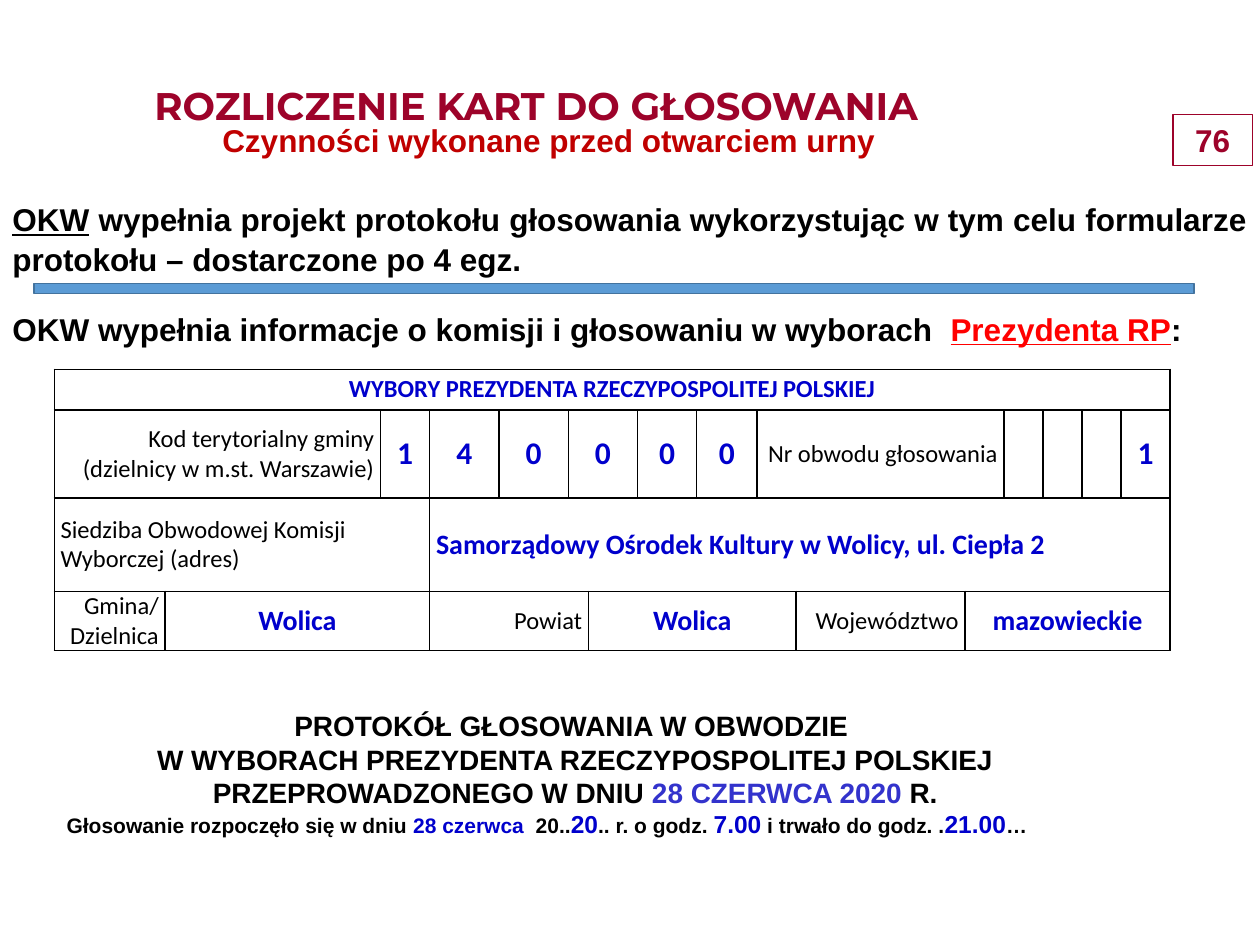
from typing import NamedTuple, Optional

from lxml.etree import SubElement
from pptx import Presentation
from pptx.dml.color import RGBColor
from pptx.enum.shapes import MSO_SHAPE as Preset
from pptx.enum.text import MSO_ANCHOR as Anchor, MSO_AUTO_SIZE as AutoSize, PP_ALIGN as Align
from pptx.oxml.ns import qn
from pptx.util import Pt

BLACK, BLUE, MAROON = "000000", "0000CC", "9D032A"
COLUMN_WIDTHS = [63.4, 123.1, 28.1, 39.6, 39.6, 11.5, 28.1, 33.8,
                 34.6, 22.3, 96.5, 22.3, 22.3, 22.3, 22.3, 28.1]
ROW_HEIGHTS = [23.2, 50.4, 53.3, 33.8]


class Span(NamedTuple):
    text: str
    size: float = 18
    color: str = BLACK
    bold: bool = True
    underline: bool = False
    font: str = "Arial"


class Para(NamedTuple):
    spans: list[Span]
    align: Align = Align.CENTER
    after: float = 0
    line: Optional[float] = None


class Frame(NamedTuple):
    left: float
    top: float
    width: float
    height: float


class Entry(NamedTuple):
    row: int
    column: int
    width: int
    span: Span
    align: Align = Align.CENTER


def rgb(value: str) -> RGBColor:
    return RGBColor.from_string(value)


def label(text: str) -> Span:
    return Span(text, 14, BLACK, False, font="Calibri")


def value(text: str, size: float = 16) -> Span:
    return Span(text, size, BLUE, font="Calibri")


def write_para(target, para: Para) -> None:
    target.alignment = para.align
    target.space_after = Pt(para.after)
    if para.line:
        target.line_spacing = Pt(para.line)
    for span in para.spans:
        for index, text in enumerate(span.text.split("\n")):
            if index:
                target.add_line_break()
            run = target.add_run()
            run.text = text
            run.font.name = span.font
            run.font.size = Pt(span.size)
            run.font.bold = span.bold
            run.font.underline = span.underline
            run.font.color.rgb = rgb(span.color)


def write_text(box, paras: list[Para]) -> None:
    frame = box.text_frame
    frame.word_wrap = True
    frame.auto_size = AutoSize.SHAPE_TO_FIT_TEXT
    for index, para in enumerate(paras):
        write_para(frame.add_paragraph() if index else frame.paragraphs[0], para)


def add_text(page, place: Frame, paras: list[Para]):
    box = page.shapes.add_textbox(*map(Pt, place))
    write_text(box, paras)
    return box


def add_rectangle(page, place: Frame, line: str, weight: float, fill: Optional[str] = None):
    box = page.shapes.add_shape(Preset.RECTANGLE, *map(Pt, place))
    box.shadow.inherit = False
    if fill:
        box.fill.solid()
        box.fill.fore_color.rgb = rgb(fill)
    else:
        box.fill.background()
    box.line.color.rgb = rgb(line)
    box.line.width = Pt(weight)
    return box


def style_cell(cell) -> None:
    properties = cell._tc.get_or_add_tcPr()
    for side in ("a:lnL", "a:lnR", "a:lnT", "a:lnB"):
        border = SubElement(properties, qn(side), w=str(Pt(1)))
        SubElement(SubElement(border, qn("a:solidFill")), qn("a:srgbClr"), val=BLACK)
    cell.fill.background()
    cell.vertical_anchor = Anchor.MIDDLE
    cell.margin_left = cell.margin_right = Pt(3.6)
    cell.margin_top = cell.margin_bottom = Pt(0)


def add_form(page, place: Frame, entries: list[Entry]) -> None:
    table = page.shapes.add_table(len(ROW_HEIGHTS), len(COLUMN_WIDTHS), *map(Pt, place)).table
    table.first_row = table.horz_banding = False
    for column, width in zip(table.columns, COLUMN_WIDTHS):
        column.width = Pt(width)
    for row, height in zip(table.rows, ROW_HEIGHTS):
        row.height = Pt(height)
    for cell in table.iter_cells():
        style_cell(cell)
    for entry in entries:
        cell = table.cell(entry.row, entry.column)
        if entry.width > 1:
            cell.merge(table.cell(entry.row, entry.column + entry.width - 1))
        write_para(cell.text_frame.paragraphs[0], Para([entry.span], entry.align))


def main() -> None:
    deck = Presentation()
    deck.slide_width, deck.slide_height = Pt(720), Pt(540)
    page = deck.slides.add_slide(deck.slide_layouts[6])

    number = add_rectangle(page, Frame(670.3, 65.5, 45.4, 29), MAROON, 0.75)
    write_text(number, [Para([Span("76", color=MAROON)])])

    add_text(page, Frame(0, 109.4, 720, 93.6), [
        Para([Span("OKW", underline=True),
              Span(" wypełnia projekt protokołu głosowania wykorzystując w tym celu "
                   "formularze protokołu – dostarczone po 4 egz.")], Align.JUSTIFY, 18, 23),
        Para([Span("OKW wypełnia informacje o komisji i głosowaniu w wyborach  "),
              Span("Prezydenta RP", color="FF0000", underline=True),
              Span(":")], Align.JUSTIFY, 6),
    ])

    digits = [(2, 1, "1"), (3, 1, "4"), (4, 1, "0"), (5, 2, "0"),
              (7, 1, "0"), (8, 1, "0"), (15, 1, "1")]
    add_form(page, Frame(31, 211, 640.8, 160.6), [
        Entry(0, 0, 16, value("WYBORY PREZYDENTA RZECZYPOSPOLITEJ POLSKIEJ", 14)),
        Entry(1, 0, 2, label("Kod terytorialny gminy (dzielnicy w m.st. Warszawie)"), Align.RIGHT),
        *(Entry(1, column, width, value(digit, 18)) for column, width, digit in digits),
        Entry(1, 9, 3 - 1 + 1, label("Nr obwodu głosowania"), Align.RIGHT)._replace(width=3),
        Entry(2, 0, 3, label("Siedziba Obwodowej Komisji Wyborczej (adres)"), Align.LEFT),
        Entry(2, 3, 13, value("Samorządowy Ośrodek Kultury w Wolicy, ul. Ciepła 2"), Align.LEFT),
        Entry(3, 0, 1, label("Gmina/Dzielnica"), Align.RIGHT),
        Entry(3, 1, 2, value("Wolica")),
        Entry(3, 3, 3, label("Powiat"), Align.RIGHT),
        Entry(3, 6, 4, value("Wolica")),
        Entry(3, 10, 1, label("Województwo"), Align.RIGHT),
        Entry(3, 11, 5, value("mazowieckie")),
    ])

    protocol = add_text(page, Frame(31, 392.4, 595.4, 87.1), [
        Para([Span("PROTOKÓŁ GŁOSOWANIA W OBWODZIE \n"
                   "W WYBORACH PREZYDENTA RZECZYPOSPOLITEJ POLSKIEJ", 16)]),
        Para([Span("PRZEPROWADZONEGO W DNIU ", 16),
              Span("28 CZERWCA 2020 ", 16, "3333CC"), Span("R.", 16)]),
        Para([Span("Głosowanie rozpoczęło się w dniu ", 12), Span("28 czerwca ", 12, BLUE),
              Span(" 20..", 12), Span("20", 14, BLUE), Span(".. r. o godz. ", 12),
              Span("7.00", 14, BLUE), Span(" i trwało do godz. .", 12),
              Span("21.00", 14, BLUE), Span("…", 12)], Align.LEFT),
    ])
    protocol.text_frame.vertical_anchor = Anchor.MIDDLE
    protocol.text_frame.margin_top = Pt(12.2)
    protocol.text_frame.margin_bottom = Pt(0)

    add_rectangle(page, Frame(19.4, 162, 663.1, 5.8), "43739E", 1, "5B9BD5")
    add_text(page, Frame(21.6, 65.5, 583.9, 29),
             [Para([Span("Czynności wykonane przed otwarciem urny", color="C00000")])])
    add_text(page, Frame(54, 43.2, 504.7, 33.8),
             [Para([Span("ROZLICZENIE KART DO GŁOSOWANIA", 22, MAROON, font="Montserrat")],
                   after=6)])
    deck.save("out.pptx")


if __name__ == "__main__":
    main()
